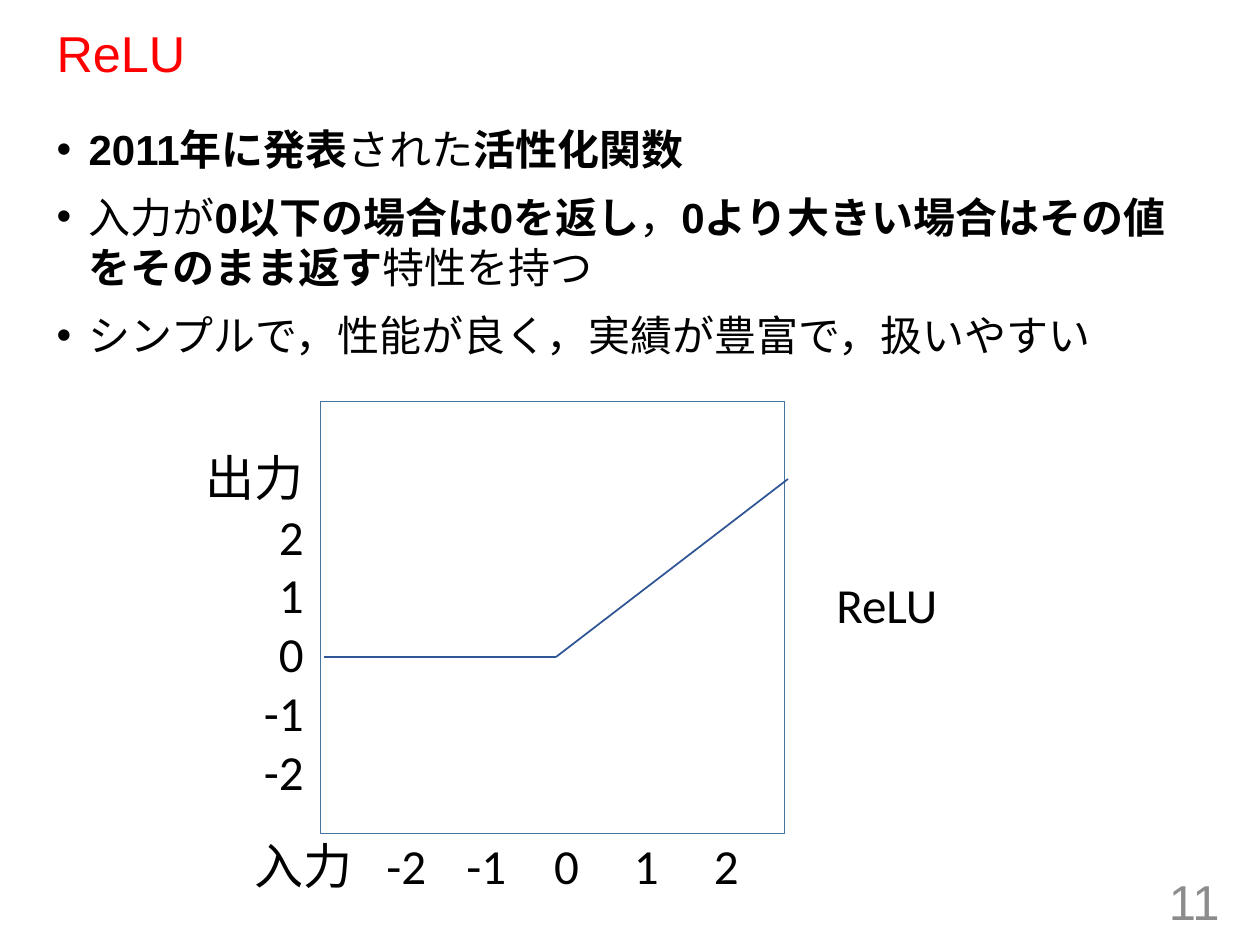
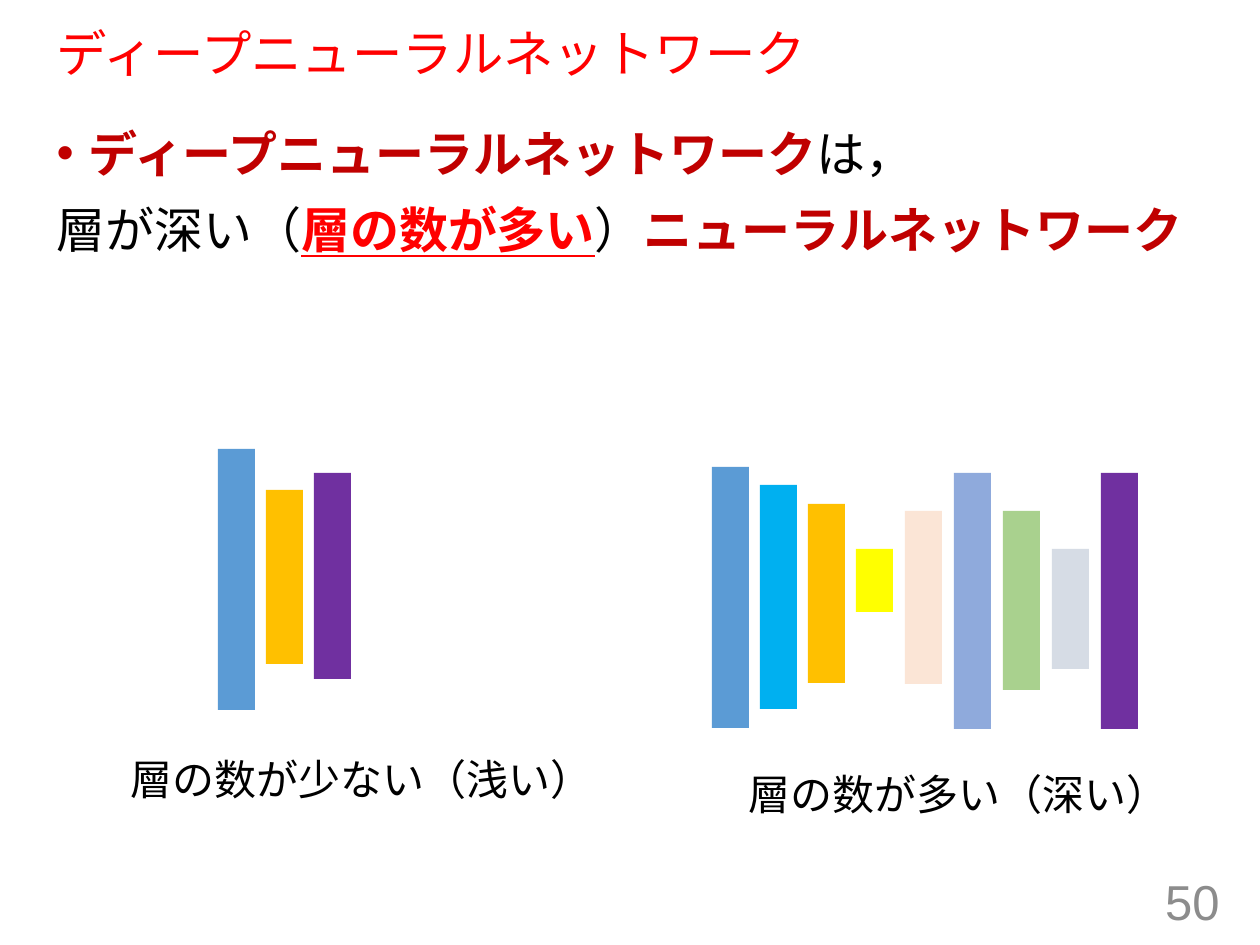
from lxml.etree import SubElement
from pptx import Presentation
from pptx.dml.color import RGBColor
from pptx.enum.shapes import MSO_CONNECTOR as Connector, MSO_SHAPE as Shape
from pptx.enum.text import MSO_ANCHOR as Anchor, MSO_AUTO_SIZE as AutoSize, PP_ALIGN as Align
from pptx.oxml.ns import qn
from pptx.util import Pt

EMU_PER_PX = 914400 / 126
BLACK, RED, DARK_RED, GRAY = "000000", "FF0000", "C00000", "8C8C8C"
BLUE, AMBER, PURPLE = "5B9BD5", "FFC000", "7030A0"


def px(*lengths):
    """Turn px lengths into a list of EMU values."""
    return [round(length * EMU_PER_PX) for length in lengths]


def write(shape, paragraphs, size=28, font="Calibri", color=BLACK, align=Align.LEFT,
          anchor=Anchor.TOP, before=0, spacing=1.0, indent=None):
    """Fill a shape; a paragraph is a list of (text, format) runs, where format
    may hold color, bold and underline."""
    frame = shape.text_frame
    frame.word_wrap, frame.auto_size = True, AutoSize.NONE
    frame.vertical_anchor = anchor
    for index, runs in enumerate(paragraphs):
        paragraph = frame.paragraphs[0] if index == 0 else frame.add_paragraph()
        paragraph.alignment, paragraph.line_spacing = align, spacing
        paragraph.space_before = Pt(before)
        if indent:
            properties = paragraph._p.get_or_add_pPr()
            properties.set("marL", str(px(indent)[0]))
            properties.set("indent", str(px(-indent)[0]))
        for text, style in runs:
            run = paragraph.add_run()
            run.text = text
            run.font.size, run.font.name = Pt(size), font
            run.font.bold = style.get("bold", False)
            run.font.underline = style.get("underline", False)
            run.font.color.rgb = RGBColor.from_string(style.get("color", color))


presentation = Presentation()
presentation.slide_width, presentation.slide_height = px(1260, 945)

# Title, body and page number, alike on both slides
bold = {"bold": True}
term = {"bold": True, "color": DARK_RED}
stress = {"bold": True, "underline": True, "color": RED}
pages = [
    ("ReLU", "11", 24, (1166, 735), [
        [("2011年に発表", bold), ("された", {}), ("活性化関数", bold)],
        [("入力が", {}), ("0以下の場合は0を返し", bold), ("，", {}),
         ("0より大きい場合はその値をそのまま返す", bold), ("特性を持つ", {})],
        [("シンプルで，性能が良く，実績が豊富で，扱いやすい", {})],
    ]),
    ("ディープニューラルネットワーク", "50", 28, (1188, 149), [
        [("ディープニューラルネットワーク", term), ("は，", {})],
        [("層が深い（", {}), ("層の数が多い", stress), ("）", {}),
         ("ニューラルネットワーク", term)],
    ]),
]
for title, number, body_size, body_extent, body_paragraphs in pages:
    slide = presentation.slides.add_slide(presentation.slide_layouts[1])
    heading, body = slide.placeholders
    heading.left, heading.top, heading.width, heading.height = px(44, 24, 1166, 64)
    write(heading, [[(title, {})]], size=28.8, font="Arial", color=RED,
          anchor=Anchor.MIDDLE, spacing=0.9)
    body.left, body.top, body.width, body.height = px(44, 117, *body_extent)
    write(body, body_paragraphs, size=body_size, font="Arial", before=10, indent=32)
    page_number = slide.shapes.add_textbox(*px(949, 876, 283, 50))
    write(page_number, [[(number, {})]], font="Arial", color=GRAY,
          align=Align.RIGHT, anchor=Anchor.MIDDLE)

relu_slide, network_slide = presentation.slides

# ReLU graph
plot_area = relu_slide.shapes.add_shape(Shape.RECTANGLE, *px(320, 401, 465, 432))
plot_area.shadow.inherit = False
plot_area.fill.solid()
plot_area.fill.fore_color.rgb = RGBColor.from_string("FFFFFF")
plot_area.line.color.rgb = RGBColor.from_string("43739E")
plot_area.line.width = Pt(0.5)

curve_points = [(324, 657), (556, 657), (788, 479)]
for start, end in zip(curve_points, curve_points[1:]):
    segment = relu_slide.shapes.add_connector(Connector.STRAIGHT, *px(*start, *end))
    segment.line.color.rgb = RGBColor.from_string("2F5597")
    segment.line.width = Pt(1)
    SubElement(segment._element.spPr, qn("a:effectLst"))

curve_name = relu_slide.shapes.add_textbox(*px(824, 568, 250, 131))
write(curve_name, [[("ReLU", {})]])

output_axis = relu_slide.shapes.add_textbox(*px(146, 441, 170, 369))
write(output_axis, [[(label, {})] for label in ["出力", "2", "1", "0", "-1", "-2"]],
      align=Align.RIGHT)

input_axis = relu_slide.shapes.add_textbox(*px(242, 829, 789, 72))
write(input_axis, [[("\t".join(["入力", "-2", "-1", "0", "1", "2"]), {})]])
axis_properties = input_axis.text_frame.paragraphs[0]._p.get_or_add_pPr()
tab_list = SubElement(axis_properties, qn("a:tabLst"))
for column in range(5):
    SubElement(tab_list, qn("a:tab"), pos=str(px(152 + 80 * column)[0]), algn="ctr")

# Shallow and deep networks: first bar's left, then top, height and colour of each layer
networks = [
    (218, [(449, 261, BLUE), (490, 174, AMBER), (473, 206, PURPLE)]),
    (712, [(467, 261, BLUE), (485, 224, "00B0F0"), (504, 179, AMBER),
           (549, 63, "FFFF00"), (511, 173, "FBE5D6"), (473, 256, "8FAADC"),
           (511, 179, "A9D18E"), (549, 120, "D6DCE5"), (473, 256, PURPLE)]),
]
for first_left, layers in networks:
    for index, (top, height, color) in enumerate(layers):
        left = first_left + 48 * index + max(0, index - 3)
        layer = network_slide.shapes.add_shape(Shape.RECTANGLE, *px(left, top, 37, height))
        layer.shadow.inherit = False
        layer.fill.solid()
        layer.fill.fore_color.rgb = RGBColor.from_string(color)
        layer.line.fill.background()

for left, top, width, text in [(118, 747, 491, "層の数が少ない（浅い）"),
                               (736, 762, 450, "層の数が多い（深い）")]:
    caption = network_slide.shapes.add_textbox(*px(left, top, width, 63))
    write(caption, [[(text, {})]], size=24)

# The second line of the definition carries no bullet
plain_line = network_slide.placeholders[1].text_frame.paragraphs[1]
plain_properties = plain_line._p.get_or_add_pPr()
plain_properties.set("marL", "0")
plain_properties.set("indent", "0")
SubElement(plain_properties, qn("a:buNone"))

presentation.save("out.pptx")
